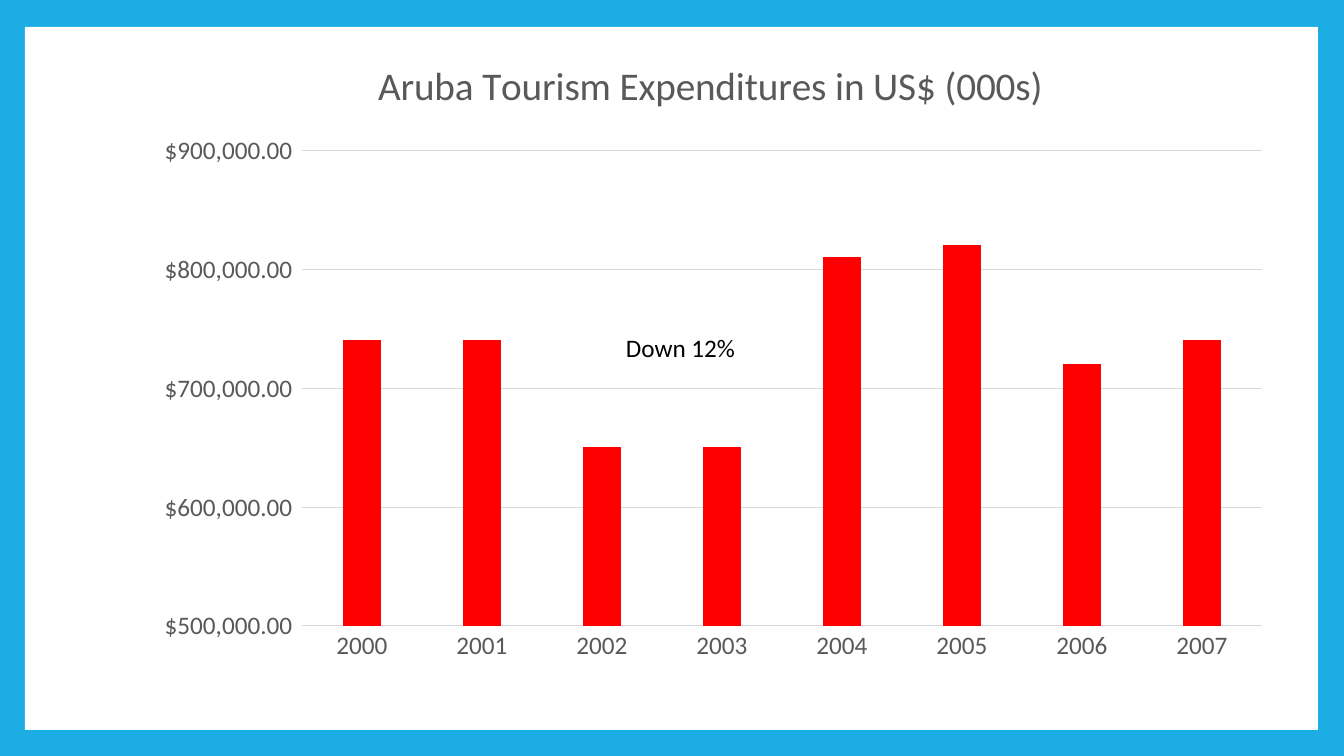
from lxml import etree
from pptx import Presentation
from pptx.chart.data import CategoryChartData
from pptx.dml.color import RGBColor
from pptx.enum.chart import XL_CHART_TYPE as ChartType, XL_TICK_MARK as Tick
from pptx.enum.shapes import MSO_SHAPE as Shape
from pptx.oxml import parse_xml
from pptx.oxml.ns import nsdecls, qn
from pptx.util import Pt

PX = 12192000 / 1344
COLORS = {"frame": "1CADE4", "panel": "FFFFFF", "bar": "FF0000",
          "label": "595959", "grid": "D9D9D9", "note": "000000"}
SPENDING = {"2000": 740000, "2001": 740000, "2002": 650000, "2003": 650000,
            "2004": 810000, "2005": 820000, "2006": 720000, "2007": 740000}


def emu(*lengths):
    """Turn pixel lengths into EMU."""
    return [round(n * PX) for n in lengths]


def color(name):
    """Look up a named colour."""
    return RGBColor.from_string(COLORS[name])


def style_font(font, size, name):
    """Apply size, colour and face to a font."""
    font.size, font.name, font.bold = Pt(size), "Calibri", False
    font.color.rgb = color(name)


def style_line(line, name):
    """Draw a thin line in a named colour."""
    line.color.rgb = color(name)
    line.width = Pt(0.75)


def set_layout(parent, before, **fractions):
    """Place a chart part by fractions of the chart box."""
    for old in parent.findall(qn("c:layout")):
        parent.remove(old)
    layout = parse_xml(f"<c:layout {nsdecls('c')}/>")
    manual = etree.SubElement(layout, qn("c:manualLayout"))
    settings = {"xMode": "edge", "yMode": "edge", **fractions}
    if "w" in fractions:
        settings = {"layoutTarget": "inner", **settings}
    for tag, value in settings.items():
        etree.SubElement(manual, qn(f"c:{tag}")).set("val", str(value))
    parent.find(qn(before)).addprevious(layout)


def add_panel(slide, x, y, w, h):
    """Add the white panel over the blue background."""
    fill = slide.background.fill
    fill.solid()
    fill.fore_color.rgb = color("frame")
    s = slide.shapes.add_shape(Shape.RECTANGLE, *emu(x, y, w, h))
    s.shadow.inherit = False
    s.fill.solid()
    s.fill.fore_color.rgb = color("panel")
    s.line.fill.background()


def add_spending_chart(slide, x, y, w, h):
    """Add the yearly column chart with its title."""
    data = CategoryChartData()
    data.categories = list(SPENDING)
    data.add_series("Series 1", list(SPENDING.values()))
    chart = slide.shapes.add_chart(
        ChartType.COLUMN_CLUSTERED, *emu(x, y, w, h), data).chart
    style_font(chart.font, 14, "note")
    chart.has_legend = False

    p = chart.chart_title.text_frame.paragraphs[0]
    p.text = "Aruba Tourism Expenditures in US$ (000s)"
    style_font(p.font, 28, "label")
    chart.chart_title.include_in_layout = False
    title = p._p.getparent().getparent().getparent()
    set_layout(title, "c:overlay", x=235 / w, y=19 / h)

    for axis in (chart.category_axis, chart.value_axis):
        axis.major_tick_mark = axis.minor_tick_mark = Tick.NONE
        style_font(axis.tick_labels.font, 18, "label")
    style_line(chart.category_axis.format.line, "grid")

    values = chart.value_axis
    values.minimum_scale, values.maximum_scale = 500000, 900000
    values.major_unit = 100000
    values.format.line.fill.background()
    style_line(values.major_gridlines.format.line, "grid")
    values.tick_labels.number_format = '_("$"* #,##0.00_)'
    values.tick_labels.number_format_is_linked = False

    plot = chart.plots[0]
    plot.gap_width, plot.overlap, plot.vary_by_categories = 219, -27, False
    bars = plot.series[0].format
    bars.fill.solid()
    bars.fill.fore_color.rgb = color("bar")
    style_line(bars.line, "bar")
    plot_area = chart._chartSpace.chart.plotArea
    set_layout(plot_area, "c:barChart",
               x=166 / w, y=118 / h, w=960 / w, h=475 / h)


def add_note(slide, x, y, w, h):
    """Add the remark above the low years."""
    tf = slide.shapes.add_textbox(*emu(x, y, w, h)).text_frame
    tf.word_wrap = True
    p = tf.paragraphs[0]
    p.text = "Down 12%"
    style_font(p.font, 18, "note")


def main():
    """Build and save the slide."""
    prs = Presentation()
    prs.slide_width, prs.slide_height = emu(1344, 756)
    slide = prs.slides.add_slide(prs.slide_layouts[6])
    add_panel(slide, 25, 27, 1293, 703)
    add_spending_chart(slide, 136, 33, 1149, 639)
    add_note(slide, 616, 327, 143, 40)
    prs.save("out.pptx")


if __name__ == "__main__":
    main()
